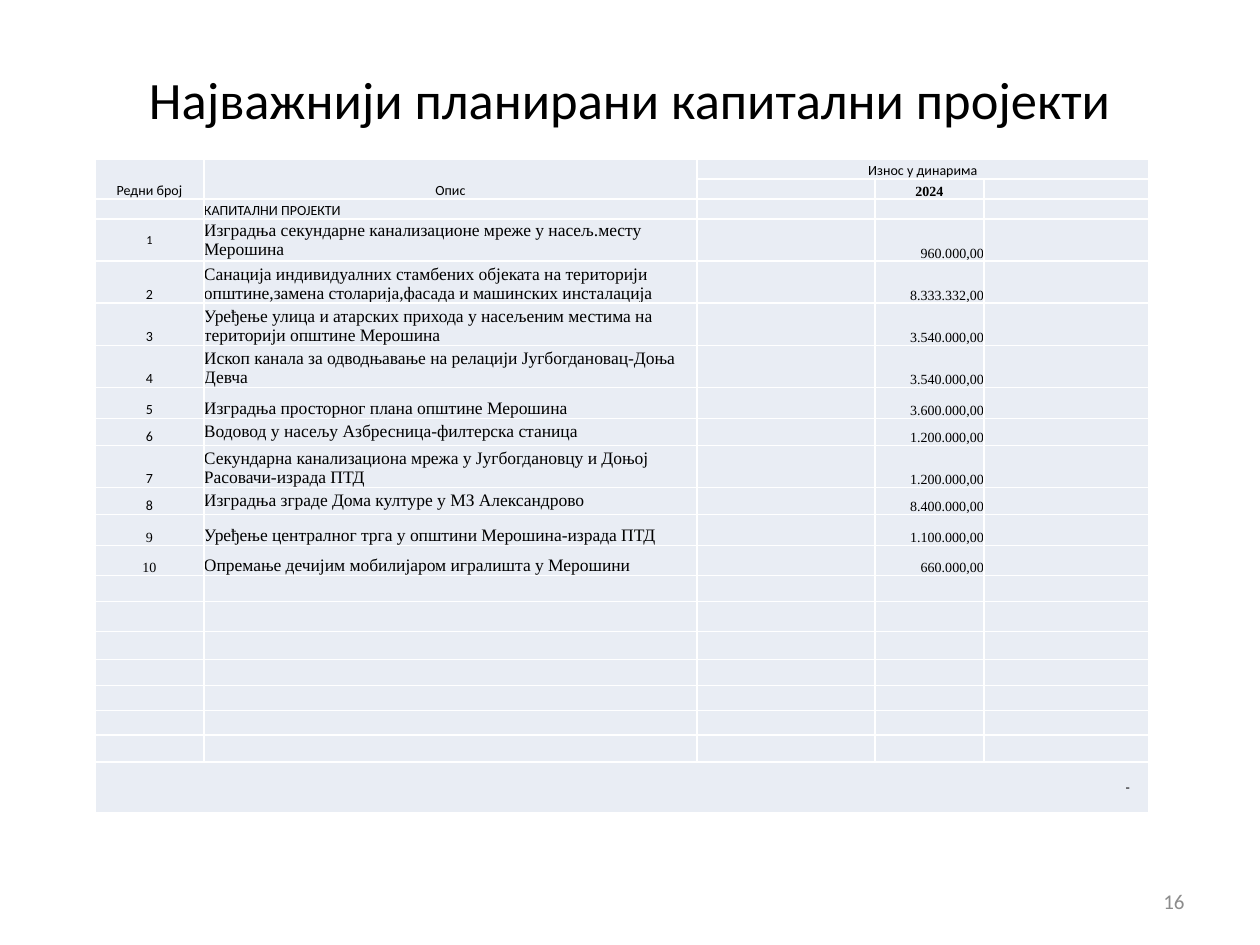
from lxml import etree
from pptx import Presentation
from pptx.dml.color import RGBColor
from pptx.enum.text import MSO_ANCHOR, PP_ALIGN
from pptx.oxml.ns import qn
from pptx.util import Pt

LEFT, CENTER, RIGHT = PP_ALIGN.LEFT, PP_ALIGN.CENTER, PP_ALIGN.RIGHT
MIDDLE, BOTTOM = MSO_ANCHOR.MIDDLE, MSO_ANCHOR.BOTTOM

BLACK = RGBColor(0x00, 0x00, 0x00)
GRAY = RGBColor(0x8C, 0x8C, 0x8C)
WHITE = RGBColor(0xFF, 0xFF, 0xFF)
CELL_FILL = RGBColor(0xE9, 0xED, 0xF4)

SANS, SERIF = "Calibri", "Times New Roman"
EMU_PER_PX = 914400 / 126

COLUMN_WIDTHS = [109, 493, 178, 109, 165]
HEADER_HEIGHTS = [20, 20, 20]
EMPTY_HEIGHTS = [26, 30, 28, 26, 25, 25, 27]
TOTAL_HEIGHT = 51

# Row height, description, amount, anchor of the description
PROJECTS = [
    (38, "Изградња секундарне канализационе мреже у насељ.месту Мерошина", "960.000,00", MIDDLE),
    (38, "Санација индивидуалних стамбених објеката на територији "
         "општине,замена столарија,фасада и машинских инсталација", "8.333.332,00", BOTTOM),
    (38, "Уређење улица и атарских прихода у насељеним местима на "
         "територији општине Мерошина", "3.540.000,00", BOTTOM),
    (38, "Ископ канала за одводњавање на релацији Југбогдановац-Доња Девча", "3.540.000,00", BOTTOM),
    (31, "Изградња просторног плана општине Мерошина", "3.600.000,00", BOTTOM),
    (27, "Водовод у насељу Азбресница-филтерска станица", "1.200.000,00", MIDDLE),
    (38, "Секундарна канализациона мрежа у Југбогдановцу и Доњој "
         "Расовачи-израда ПТД", "1.200.000,00", BOTTOM),
    (27, "Изградња зграде Дома културе у МЗ Александрово", "8.400.000,00", MIDDLE),
    (31, "Уређење централног трга у општини Мерошина-израда ПТД", "1.100.000,00", BOTTOM),
    (30, "Опремање дечијим мобилијаром игралишта у Мерошини", "660.000,00", BOTTOM),
]


def px(length):
    return round(length * EMU_PER_PX)


def write(holder, text, size=8, font=SANS, color=BLACK, bold=False, align=LEFT):
    paragraph = holder.text_frame.paragraphs[0]
    paragraph.alignment = align
    run = paragraph.add_run()
    run.text = text
    run.font.size = Pt(size)
    run.font.name = font
    run.font.bold = bold
    run.font.color.rgb = color


def format_cell(cell):
    """Plain fill, no margins, thin white borders, small empty line."""
    cell.margin_left = cell.margin_right = cell.margin_top = cell.margin_bottom = 0
    cell.vertical_anchor = BOTTOM
    cell.fill.solid()
    cell.fill.fore_color.rgb = CELL_FILL
    properties = cell._tc.get_or_add_tcPr()
    for position, side in enumerate(("a:lnL", "a:lnR", "a:lnT", "a:lnB")):
        border = etree.Element(qn(side), w=str(Pt(1)))
        solid = etree.SubElement(border, qn("a:solidFill"))
        etree.SubElement(solid, qn("a:srgbClr"), val=str(WHITE))
        properties.insert(position, border)
    paragraph = cell.text_frame.paragraphs[0]
    etree.SubElement(paragraph._p, qn("a:endParaRPr"), sz="800")


def add_title(slide, left, top, width, height):
    title = slide.shapes.title
    title.left, title.top, title.width, title.height = map(px, (left, top, width, height))
    title.text_frame.vertical_anchor = MIDDLE
    write(title, "Најважнији планирани капитални пројекти", size=30, align=CENTER)


def fill_header(table):
    number, description, amount = (table.cell(0, column) for column in range(3))
    number.merge(table.cell(1, 0))
    description.merge(table.cell(1, 1))
    amount.merge(table.cell(0, 4))
    write(number, "Редни број", align=CENTER)
    write(description, "Опис", align=CENTER)
    write(amount, "Износ у динарима", align=CENTER)
    write(table.cell(1, 3), "2024", font=SERIF, bold=True, align=CENTER)
    write(table.cell(2, 1), "КАПИТАЛНИ ПРОЈЕКТИ")


def fill_projects(table):
    for number, (_, description, amount, anchor) in enumerate(PROJECTS, start=1):
        row = len(HEADER_HEIGHTS) + number - 1
        number_cell, description_cell = table.cell(row, 0), table.cell(row, 1)
        write(number_cell, str(number), size=7 if number == 1 else 8,
              font=SERIF if number >= 9 else SANS, align=CENTER)
        if number == 1:
            number_cell.vertical_anchor = MIDDLE
        write(description_cell, description, size=10, font=SERIF)
        description_cell.vertical_anchor = anchor
        write(table.cell(row, 3), amount, font=SERIF, align=RIGHT)


def fill_total(table):
    last = len(table.rows) - 1
    total = table.cell(last, 0)
    total.merge(table.cell(last, len(COLUMN_WIDTHS) - 1))
    total.vertical_anchor = MIDDLE
    total.margin_right = px(19)
    write(total, "-", align=RIGHT)


def add_projects_table(slide, left, top):
    heights = HEADER_HEIGHTS + [project[0] for project in PROJECTS] + EMPTY_HEIGHTS + [TOTAL_HEIGHT]
    table = slide.shapes.add_table(
        len(heights), len(COLUMN_WIDTHS), px(left), px(top),
        px(sum(COLUMN_WIDTHS)), px(sum(heights))).table
    table.first_row = table.horz_banding = False
    for column, width in zip(table.columns, COLUMN_WIDTHS):
        column.width = px(width)
    for row, height in zip(table.rows, heights):
        row.height = px(height)
        for cell in row.cells:
            format_cell(cell)
            # Runs are placed before the end mark by add_run
    fill_header(table)
    fill_projects(table)
    fill_total(table)


def add_page_number(slide, left, top, width, height):
    page_number = slide.shapes.add_textbox(*map(px, (left, top, width, height)))
    page_number.text_frame.word_wrap = True
    page_number.text_frame.vertical_anchor = MIDDLE
    write(page_number, "16", size=12, color=GRAY, align=RIGHT)


def main():
    presentation = Presentation()
    presentation.slide_width, presentation.slide_height = px(1260), px(945)
    slide = presentation.slides.add_slide(presentation.slide_layouts[5])
    add_page_number(slide, 903, 876, 294, 50)
    add_title(slide, 63, 38, 1134, 121)
    add_projects_table(slide, 95, 159)
    presentation.save("out.pptx")


if __name__ == "__main__":
    main()
